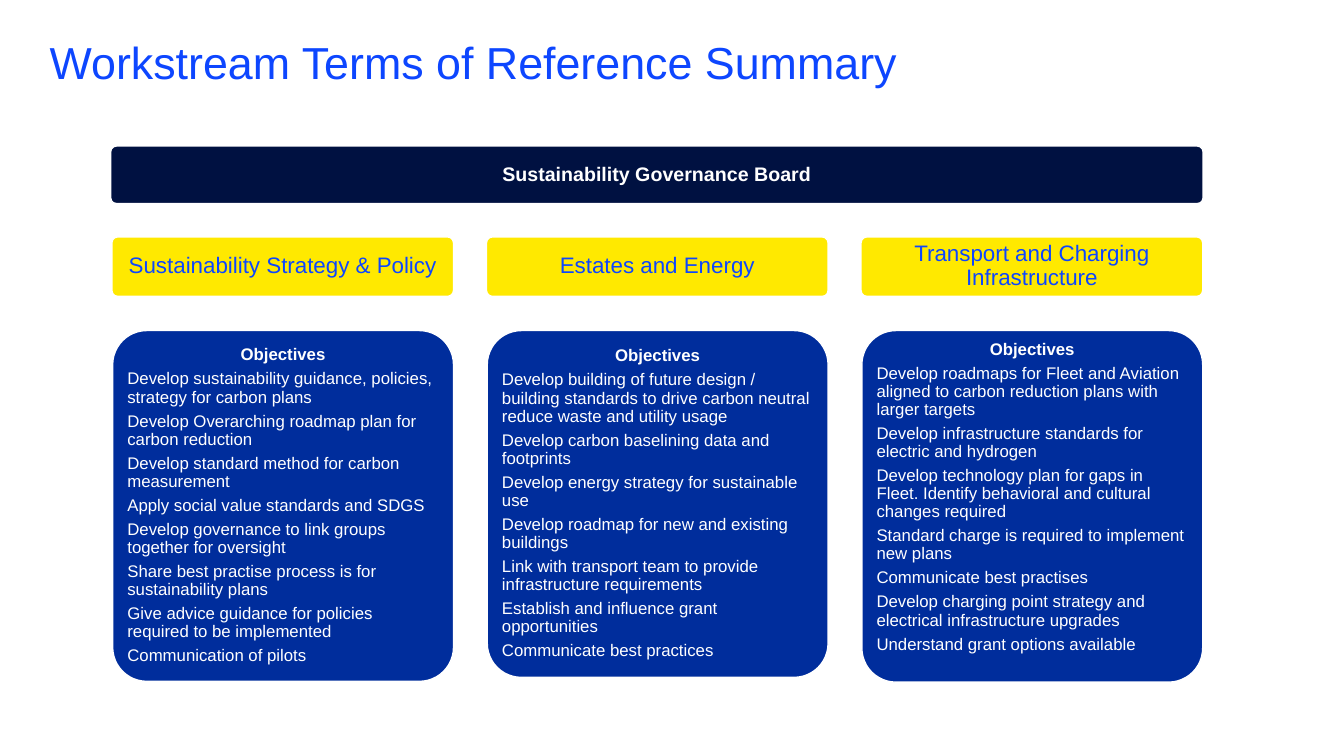
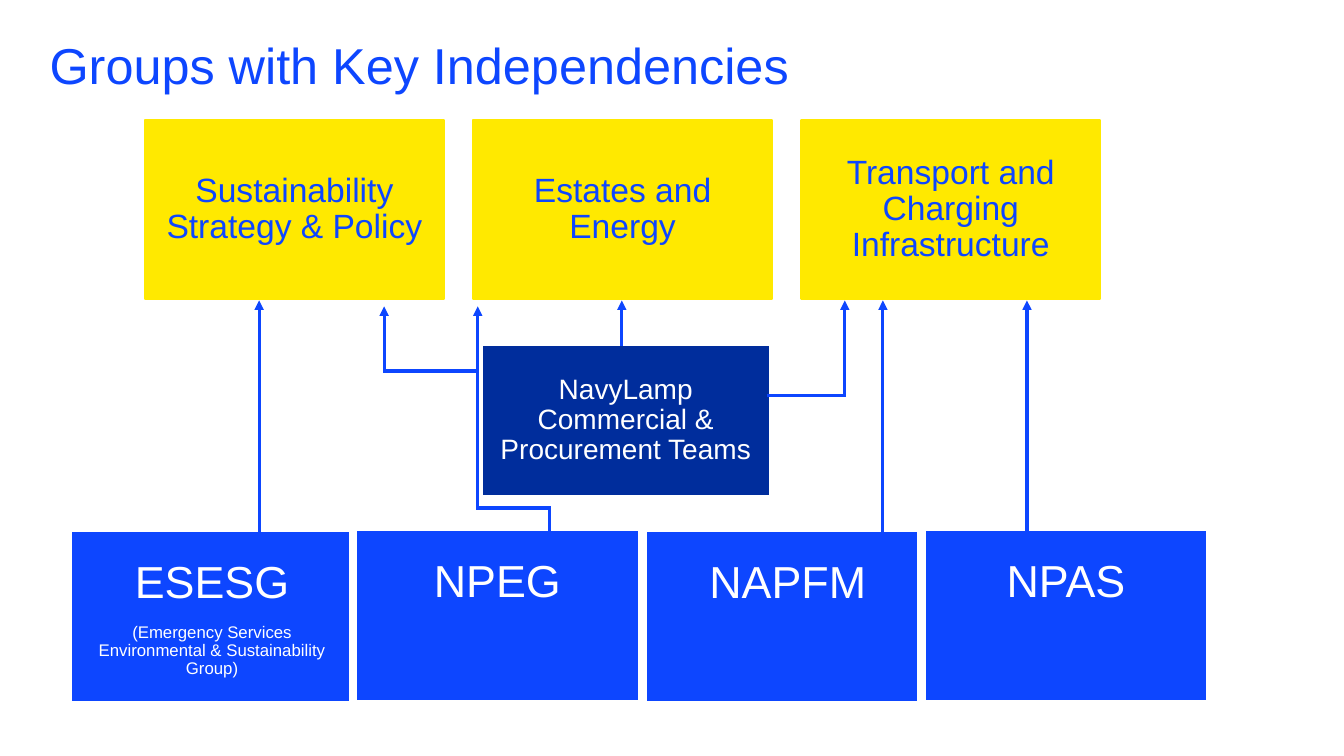
import pptx
import pptx.util
import pptx.dml.color
import pptx.enum.shapes
import pptx.enum.text
import lxml.etree
from pptx.util import Cm, Pt

COLOURS = {
    "blue": "0D46FF",
    "navy": "001141",
    "royal": "002D9C",
    "yellow": "FFE900",
    "white": "FFFFFF",
}
FONT = "Arial"
SHAPES = pptx.enum.shapes.MSO_SHAPE
CONNECTORS = pptx.enum.shapes.MSO_CONNECTOR
ALIGN = pptx.enum.text.PP_ALIGN
ANCHOR = pptx.enum.text.MSO_ANCHOR

GROUPS = [
    "Sustainability Strategy & Policy",
    "Estates and Energy",
    "Transport and Charging Infrastructure",
]


def colour(name):
    return pptx.dml.color.RGBColor.from_string(COLOURS[name])


def add_box(slide, kind, place, paragraphs, fill=None, line=None, line_width=1,
            text_colour="white", inset=0.0, top_inset=None):
    """Draw a box with (text, size, bold, alignment) paragraphs.

    Place is left, top, width, height in centimetres; text is centred
    vertically unless top_inset is given.
    """
    box = slide.shapes.add_shape(kind, *[Cm(length) for length in place])
    box.shadow.inherit = False
    if kind == SHAPES.ROUNDED_RECTANGLE:
        box.adjustments[0] = 0.1
    if fill:
        box.fill.solid()
        box.fill.fore_color.rgb = colour(fill)
    else:
        box.fill.background()
    if line:
        box.line.color.rgb = colour(line)
        box.line.width = Pt(line_width)
    else:
        box.line.fill.background()

    frame = box.text_frame
    frame.word_wrap = True
    frame.vertical_anchor = ANCHOR.MIDDLE if top_inset is None else ANCHOR.TOP
    frame.margin_left = frame.margin_right = frame.margin_bottom = Cm(inset)
    frame.margin_top = Cm(inset if top_inset is None else top_inset)
    for index, (text, size, bold, alignment) in enumerate(paragraphs):
        paragraph = frame.add_paragraph() if index else frame.paragraphs[0]
        paragraph.alignment = alignment
        paragraph.line_spacing = 0.9
        paragraph.space_after = Pt(round(0.35 * size, 1))
        run = paragraph.add_run()
        run.text = text
        run.font.name = FONT
        run.font.size = Pt(size)
        run.font.bold = bold
        run.font.color.rgb = colour(text_colour)
    return box


def add_line(slide, start, end, arrow):
    """Draw a straight blue line, with an arrowhead at its end if asked."""
    (x1, y1), (x2, y2) = start, end
    connector = slide.shapes.add_connector(
        CONNECTORS.STRAIGHT, Cm(x1), Cm(y1), Cm(x2), Cm(y2))
    connector.line.color.rgb = colour("blue")
    connector.line.width = Pt(2.25)
    main = "{http://schemas.openxmlformats.org/drawingml/2006/main}"
    if arrow:
        lxml.etree.SubElement(connector.line._get_or_add_ln(),
                              main + "tailEnd", type="triangle")
    lxml.etree.SubElement(connector._element.spPr, main + "effectLst")
    return connector


deck = pptx.Presentation()
deck.slide_width = Cm(33.87)
deck.slide_height = Cm(19.05)

# Both slides and their titles
slides = []
for title, title_size in [("Workstream Terms of Reference Summary", 32),
                          ("Groups with Key Independencies", 36)]:
    slide = deck.slides.add_slide(deck.slide_layouts[6])
    add_box(slide, SHAPES.RECTANGLE, (1.25, 1.04, 31.45, 1.5),
            [(title, title_size, False, ALIGN.LEFT)],
            text_colour="blue", top_inset=0)
    slides.append(slide)
terms, dependencies = slides

# Terms of reference: board, workstreams and their objectives
ROUNDED = SHAPES.ROUNDED_RECTANGLE
add_box(terms, ROUNDED, (2.79, 3.68, 27.53, 1.45),
        [("Sustainability Governance Board", 14, True, ALIGN.CENTER)],
        fill="navy", line="white", inset=0.15)

# Objectives, panel height and top inset of each workstream
workstreams = [
    ([
        "Develop sustainability guidance, policies, strategy for carbon plans",
        "Develop Overarching roadmap plan for carbon reduction",
        "Develop standard method for carbon measurement",
        "Apply social value standards and SDGS",
        "Develop governance to link groups together for oversight",
        "Share best practise process is for sustainability plans",
        "Give advice guidance for policies required to be implemented",
        "Communication of pilots",
    ], 8.84, None),
    ([
        "Develop building of future design / building standards to drive "
        "carbon neutral reduce waste and utility usage",
        "Develop carbon baselining data and footprints",
        "Develop energy strategy for sustainable use",
        "Develop roadmap for new and existing buildings",
        "Link with transport team to provide infrastructure requirements",
        "Establish and influence grant opportunities",
        "Communicate best practices",
    ], 8.74, None),
    ([
        "Develop roadmaps for Fleet and Aviation aligned to carbon reduction "
        "plans with larger targets",
        "Develop infrastructure standards for electric and hydrogen",
        "Develop technology plan for gaps in Fleet. Identify behavioral and "
        "cultural changes required",
        "Standard charge is required to implement new plans",
        "Communicate best practises",
        "Develop charging point strategy and electrical infrastructure upgrades",
        "Understand grant options available",
    ], 8.86, 0),
]
for column, (objectives, height, top_inset) in enumerate(workstreams):
    left = 2.82 + 9.44 * column
    add_box(terms, ROUNDED, (left, 5.97, 8.61, 1.5),
            [(GROUPS[column], 16, False, ALIGN.CENTER)],
            fill="yellow", line="white", text_colour="blue", inset=0.17)
    lines = [("Objectives", 12, True, ALIGN.CENTER)]
    lines += [(objective, 12, False, ALIGN.LEFT) for objective in objectives]
    add_box(terms, ROUNDED, (left + 0.02, 8.33, 8.59, height), lines,
            fill="royal", line="white", inset=0.12, top_inset=top_inset)

# Groups with dependencies: three groups above, four bodies below
for column, group in enumerate(GROUPS):
    add_box(dependencies, SHAPES.RECTANGLE,
            (3.66 + 8.27 * column, 3.02, 7.52, 4.52),
            [(group, 24, False, ALIGN.CENTER)],
            fill="yellow", line="yellow", line_width=1.5,
            text_colour="blue", inset=0.25)

add_box(dependencies, SHAPES.RECTANGLE, (12.14, 8.69, 7.26, 3.81),
        [("NavyLamp Commercial & Procurement Teams", 20, False, ALIGN.CENTER)],
        fill="royal", line="white", line_width=1.5, inset=0.2)

full_name = "(Emergency Services Environmental & Sustainability Group)"
bodies = [
    ("ESESG", full_name, 1.7, 13.31),
    ("NAPFM", None, 16.21, 13.31),
    ("NPEG", None, 8.89, 13.28),
    ("NPAS", None, 23.22, 13.28),
]
for body, explanation, left, top in bodies:
    lines = [(body, 32, False, ALIGN.CENTER)]
    if explanation:
        lines.append((explanation, 12, False, ALIGN.CENTER))
    add_box(dependencies, SHAPES.RECTANGLE, (left, top, 7.29, 4.47), lines,
            fill="blue", line="white", line_width=6, inset=0.33, top_inset=0.8)

# Arrows: the corner points of each, the last being its head
body_top, group_bottom, elbow_head = 13.51, 7.57, 7.72
routes = [
    [(6.53, body_top), (6.53, group_bottom)],
    [(22.25, body_top), (22.25, group_bottom)],
    [(25.88, body_top), (25.88, group_bottom)],
    [(15.67, 8.71), (15.67, group_bottom)],
    [(12.04, 9.35), (9.68, 9.35), (9.68, elbow_head)],
    [(19.33, 9.96), (21.29, 9.96), (21.29, group_bottom)],
    [(13.84, body_top), (13.84, 12.8), (12.04, 12.8), (12.04, elbow_head)],
]
# An elbow connector cannot turn to these sides without rotation, so each
# bend is two straight segments, overlapping by half a line width.
HALF_LINE = 0.04
for route in routes:
    for index, (start, end) in enumerate(zip(route, route[1:])):
        is_last = index == len(route) - 2
        if start[1] == end[1]:
            step = HALF_LINE if end[0] > start[0] else -HALF_LINE
            end = (end[0] + step, end[1])
            if index:
                start = (start[0] - step, start[1])
        add_line(dependencies, start, end, is_last)

deck.save("out.pptx")
